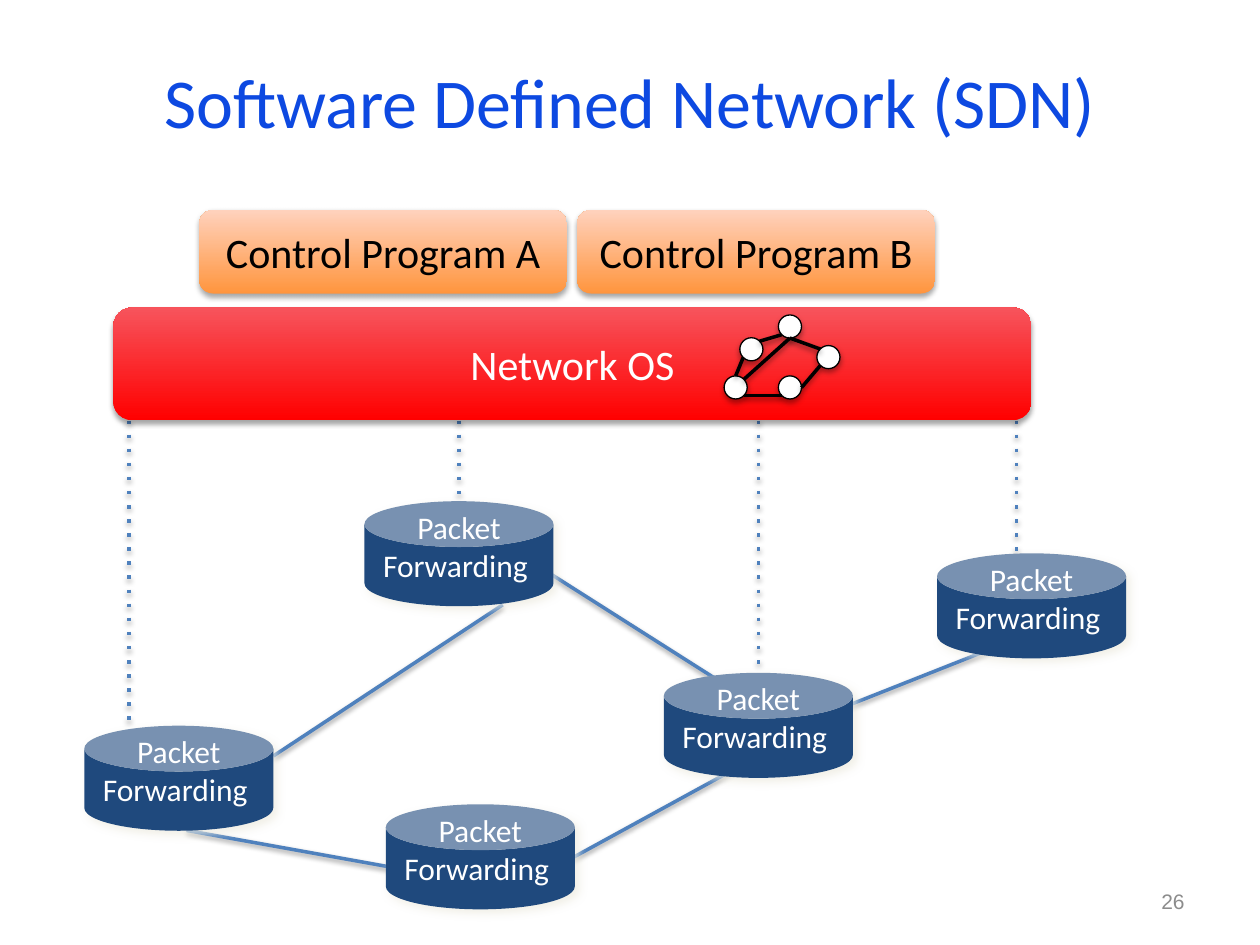
from lxml.etree import SubElement
from pptx import Presentation
from pptx.dml.color import RGBColor
from pptx.enum.shapes import MSO_CONNECTOR, MSO_SHAPE
from pptx.enum.text import MSO_ANCHOR, PP_ALIGN
from pptx.oxml.ns import qn
from pptx.util import Pt

SOFT = ("000000", 35, 3.1, 1.8, 90)
LINE = ("000000", 38, 3.1, 1.6, 90)
GLOW = ("EEECE1", 75, 5, 3, 45)


def rgb(value):
    return RGBColor.from_string(value)


def set_attrs(obj, values):
    for name, value in values.items():
        setattr(obj, name, value)


def add_shadow(sp, color, alpha, blur, dist, angle):
    effects = SubElement(sp._element.spPr, qn("a:effectLst"))
    shadow = SubElement(effects, qn("a:outerShdw"), blurRad=str(Pt(blur)),
                        dist=str(Pt(dist)), dir=str(angle * 60000), rotWithShape="0")
    clr = SubElement(shadow, qn("a:srgbClr"), val=color)
    SubElement(clr, qn("a:alpha"), val=str(alpha * 1000))


def set_text(sp, lines, size, color, font="Calibri", align=PP_ALIGN.CENTER, **frame):
    tf = sp.text_frame
    set_attrs(tf, {"word_wrap": True, "vertical_anchor": MSO_ANCHOR.MIDDLE, **frame})
    for i, line in enumerate(lines):
        p = tf.paragraphs[0] if i == 0 else tf.add_paragraph()
        p.alignment = align
        r = p.add_run()
        r.text = line
        set_attrs(r.font, {"name": font, "size": Pt(size)})
        r.font.color.rgb = rgb(color)


def add_label(s, box, text, size, color, **style):
    sp = s.shapes.add_textbox(*map(Pt, box))
    set_text(sp, [text], size, color, **style)


def add_block(s, box, text, bottom, top, color):
    sp = s.shapes.add_shape(MSO_SHAPE.ROUNDED_RECTANGLE, *map(Pt, box))
    sp.fill.gradient()
    sp.fill.gradient_angle = 90
    for stop, value in zip(sp.fill.gradient_stops, (bottom, top)):
        stop.color.rgb = rgb(value)
    sp.line.fill.background()
    add_shadow(sp, *SOFT)
    set_text(sp, [text], 24, color)


def add_switch(s, x, y):
    sp = s.shapes.add_shape(MSO_SHAPE.CAN, *map(Pt, (x, y, 108, 60)))
    sp.adjustments[0] = 0.436
    sp.fill.solid()
    sp.fill.fore_color.rgb = rgb("1F497D")
    sp.line.fill.background()
    add_shadow(sp, *GLOW)
    set_text(sp, ["Packet", "Forwarding "], 18, "FFFFFF", word_wrap=False,
             vertical_anchor=MSO_ANCHOR.BOTTOM, margin_bottom=0)


def add_line(shapes, ends, color="4F81BD", dotted=False):
    sp = shapes.add_connector(MSO_CONNECTOR.STRAIGHT, *map(Pt, ends))
    sp.line.width = Pt(2)
    sp.line.color.rgb = rgb(color)
    if dotted:
        SubElement(sp.line._get_or_add_ln(), qn("a:prstDash"), val="dot")
    add_shadow(sp, *LINE)


def add_node(shapes, x, y):
    sp = shapes.add_shape(MSO_SHAPE.OVAL, *map(Pt, (x, y, 13.2, 13.2)))
    sp.fill.solid()
    sp.fill.fore_color.rgb = rgb("FFFFFF")
    sp.line.color.rgb = rgb("000000")
    sp.line.width = Pt(0.75)
    add_shadow(sp, *SOFT)


def add_network_map(s):
    shapes = s.shapes.add_group_shape().shapes
    for x, y in [(422.8, 193), (444.8, 180), (444.8, 214.8), (466.8, 197.5), (413.8, 214.8)]:
        add_node(shapes, x, y)
    for ends in [(434, 195, 446.6, 191.3), (420.4, 214.8, 424.7, 204.3),
                 (425.2, 216.7, 451.4, 193.2), (425.2, 226, 446.9, 226),
                 (451.4, 193.2, 468.8, 199.5), (458, 221.5, 468.8, 208.8)]:
        add_line(shapes, ends, "000000")


def main():
    prs = Presentation()
    set_attrs(prs, {"slide_width": Pt(720), "slide_height": Pt(540)})
    s = prs.slides.add_slide(prs.slide_layouts[6])

    for ends in [(156.2, 432, 287.3, 345.6), (303.8, 321.1, 408.2, 387.4),
                 (312.5, 498.2, 433.4, 432), (106.6, 474.5, 238.3, 498.2),
                 (468, 409.7, 581, 365)]:
        add_line(s.shapes, ends)
    for x, bottom in [(73.6, 427), (262.3, 286.6), (433.4, 387.4), (581, 321.1)]:
        add_line(s.shapes, (x, 208.1, x, bottom), dotted=True)

    add_block(s, (113.8, 120, 210.2, 47.8), "Control Program A", "FF953E", "FFD2BD", "000000")
    add_block(s, (329.8, 120, 204.5, 47.8), "Control Program B", "FF953E", "FFD2BD", "000000")
    add_block(s, (64.8, 175.7, 524.6, 64.5), "Network OS", "FF0000", "F7545C", "FFFFFF")
    add_label(s, (36, 12.2, 648, 90), "Software Defined Network (SDN)", 40, "0D49E1")

    for x, y in [(48.2, 414.7), (220.5, 459.6), (208.3, 286.4), (379.4, 384.5), (535.5, 316.2)]:
        add_switch(s, x, y)
    add_network_map(s)
    add_label(s, (516, 500.5, 168, 28.8), "26", 12, "8C8C8C", font="Arial", align=PP_ALIGN.RIGHT)
    prs.save("out.pptx")


if __name__ == "__main__":
    main()
